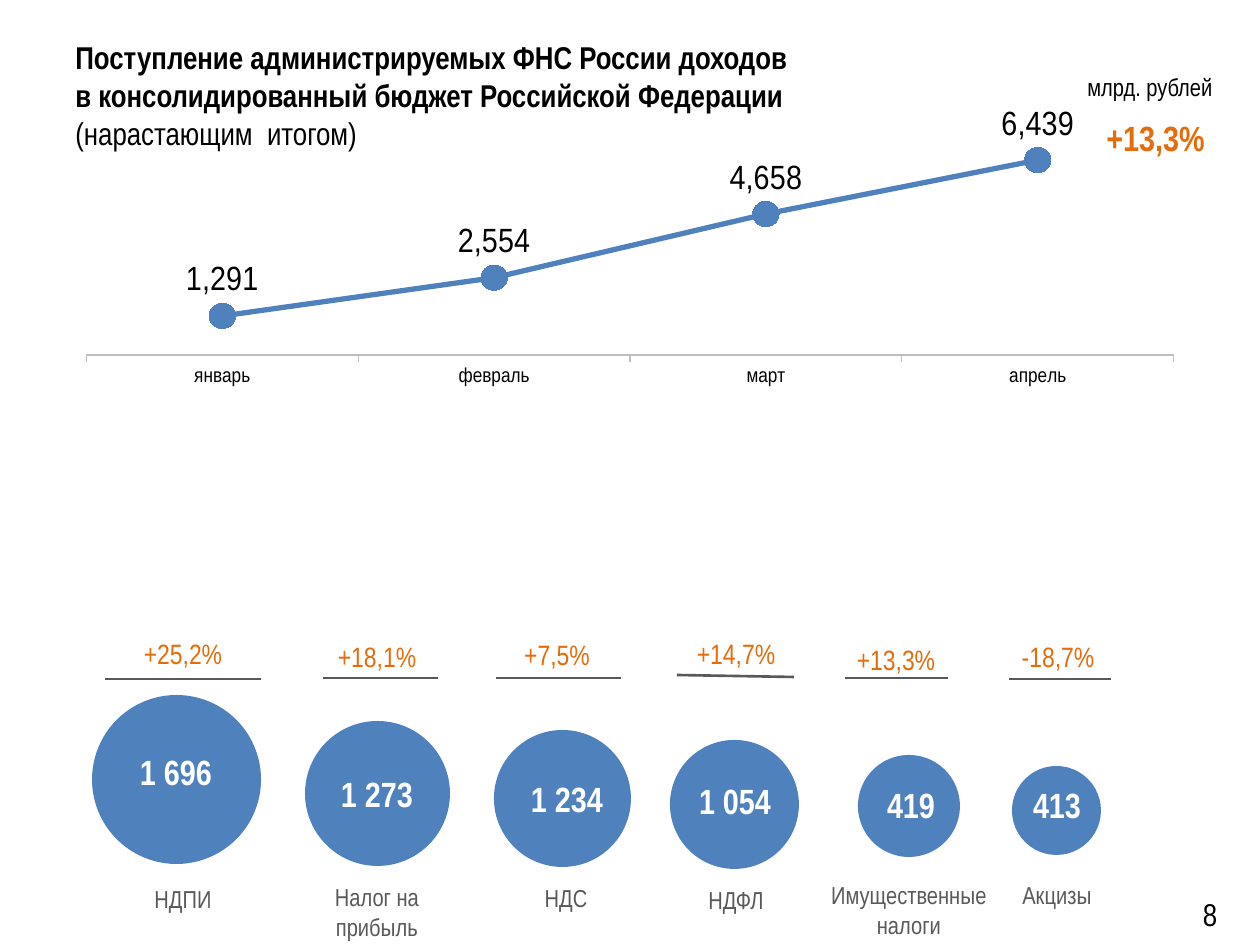
from lxml import etree
from pptx import Presentation
from pptx.chart.data import CategoryChartData
from pptx.dml.color import RGBColor
from pptx.enum.chart import XL_CHART_TYPE as ChartType, XL_LABEL_POSITION as LabelPos
from pptx.enum.chart import XL_MARKER_STYLE as Marker, XL_TICK_MARK as Tick
from pptx.enum.shapes import MSO_CONNECTOR as Connector, MSO_SHAPE as Shape
from pptx.enum.text import MSO_ANCHOR as Anchor, PP_ALIGN as Align
from pptx.oxml import parse_xml
from pptx.oxml.ns import nsdecls, qn
from pptx.util import Emu, Pt

FONT = "Arial Narrow"
BLUE = RGBColor(0x4F, 0x81, 0xBD)
ORANGE = RGBColor(0xE4, 0x6C, 0x0A)
GRAY = RGBColor(0x59, 0x59, 0x59)
AXIS_GRAY = RGBColor(0xBF, 0xBF, 0xBF)
BLACK = RGBColor(0, 0, 0)
WHITE = RGBColor(0xFF, 0xFF, 0xFF)


def px(n):
    """Pixels to EMU, 126 pixels to the inch."""
    return Emu(round(n * 914400 / 126))


def add_text(box, text, size, color, bold=False, align=Align.CENTER,
             anchor=Anchor.TOP, wrap=False):
    textbox = slide.shapes.add_textbox(*map(px, box))
    frame = textbox.text_frame
    frame.word_wrap = wrap
    frame.vertical_anchor = anchor
    frame.text = text
    for paragraph in frame.paragraphs:
        paragraph.alignment = align
        for run in paragraph.runs:
            run.font.name = FONT
            run.font.size = Pt(size)
            run.font.bold = bold
            run.font.color.rgb = color
    return frame


prs = Presentation()
prs.slide_width, prs.slide_height = px(1260), px(945)
slide = prs.slides.add_slide(prs.slide_layouts[6])

# Title
title = add_text(
    (63, 16, 1134, 158),
    "Поступление администрируемых ФНС России доходов\n"
    "в консолидированный бюджет Российской Федерации\n"
    "(нарастающим  итогом)",
    18, BLACK, bold=True, align=Align.LEFT, anchor=Anchor.MIDDLE, wrap=True)
title.paragraphs[2].runs[0].font.bold = False

# Cumulative revenue by month
revenue = CategoryChartData()
revenue.categories = ["январь", "февраль", "март", "апрель"]
revenue.add_series("Series 1", (1291, 2554, 4658, 6439))
chart = slide.shapes.add_chart(ChartType.LINE_MARKERS_STACKED, px(64), px(110),
                               px(1121), px(287), revenue).chart
chart.has_legend = False
chart.has_title = False
chart.font.name = FONT
chart.font.size = Pt(18)
chart.font.color.rgb = BLACK

months = chart.category_axis
months.major_tick_mark = Tick.OUTSIDE
months.tick_labels.font.size = Pt(12)
months.format.line.color.rgb = AXIS_GRAY
months.format.line.width = Pt(0.75)
amounts = chart.value_axis
amounts.minimum_scale = -200
amounts.has_major_gridlines = False
amounts.visible = False

plot = chart.plots[0]
plot.vary_by_categories = False
line = plot.series[0]
line.smooth = False
line.format.line.color.rgb = BLUE
line.format.line.width = Pt(3)
line.marker.style = Marker.CIRCLE
line.marker.size = 15
line.marker.format.fill.solid()
line.marker.format.fill.fore_color.rgb = BLUE
line.marker.format.line.fill.background()
labels = line.data_labels
labels.show_value = True
labels.position = LabelPos.ABOVE
labels.number_format = "#,##0"
labels.number_format_is_linked = False
labels.font.name = FONT
labels.font.size = Pt(20)
labels.font.color.rgb = BLACK

# Inner plot area as fractions of the chart
plot_area = chart.element.find(".//" + qn("c:plotArea"))
for old_layout in plot_area.findall(qn("c:layout")):
    plot_area.remove(old_layout)
plot_area.insert(0, parse_xml(
    f'<c:layout {nsdecls("c")}><c:manualLayout><c:layoutTarget val="inner"/>'
    '<c:xMode val="edge"/><c:yMode val="edge"/><c:x val="0.02"/><c:y val="0.1"/>'
    '<c:w val="0.97"/><c:h val="0.77"/></c:manualLayout></c:layout>'))

# Taxes: name, (centre, top); value, (centre, middle); change, (centre, top);
# circle (left, top, diameter); rule (x1, y1, x2, y2)
taxes = [
    ("НДПИ", (183, 878), "1 696", (176, 771), "+25,2%", (183, 630),
     (92, 695, 169), (105, 679, 261, 679)),
    ("Налог на прибыль", (377, 876), "1 273", (377, 794), "+18,1%", (377, 633),
     (305, 721, 145), (323, 678, 438, 678)),
    ("НДС", (566, 877), "1 234", (567, 798), "+7,5%", (557, 631),
     (494, 730, 137), (496, 678, 621, 678)),
    ("НДФЛ", (736, 879), "1 054", (735, 801), "+14,7%", (736, 630),
     (670, 740, 129), (677, 675, 794, 677)),
    ("Имущественные\nналоги", (909, 874), "419", (911, 804), "+13,3%", (896, 636),
     (858, 755, 102), (845, 678, 948, 678)),
    ("Акцизы", (1057, 874), "413", (1057, 804), "-18,7%", (1058, 633),
     (1012, 766, 89), (1009, 679, 1111, 679)),
]
for (name, (name_x, name_y), value, (value_x, value_y), change,
     (change_x, change_y), (left, top, diameter), rule_ends) in taxes:
    circle = slide.shapes.add_shape(Shape.OVAL, px(left), px(top),
                                    px(diameter), px(diameter))
    circle.shadow.inherit = False
    circle.fill.solid()
    circle.fill.fore_color.rgb = BLUE
    circle.line.fill.background()

    rule = slide.shapes.add_connector(Connector.STRAIGHT, *map(px, rule_ends))
    rule.line.color.rgb = GRAY
    rule.line.width = Pt(1.5)
    etree.SubElement(rule.element.spPr, qn("a:effectLst"))

    add_text((value_x - 55, value_y - 55, 110, 110), value, 20, WHITE,
             bold=True, anchor=Anchor.MIDDLE)
    add_text((change_x - 52, change_y, 104, 47), change, 16, ORANGE)
    name_height = 72 if "\n" in name else 43
    add_text((name_x - 95, name_y, 190, name_height), name, 14, GRAY)

# Unit, total growth and page number
add_text((1075, 66, 154, 43), "млрд. рублей", 14, BLACK, align=Align.LEFT)
add_text((1094, 110, 125, 55), "+13,3%", 20, ORANGE, bold=True, align=Align.LEFT)
page = add_text((1160, 859, 100, 96), "8", 18, BLACK, anchor=Anchor.MIDDLE, wrap=True)
page.paragraphs[0].line_spacing = Pt(30)

prs.save("out.pptx")
